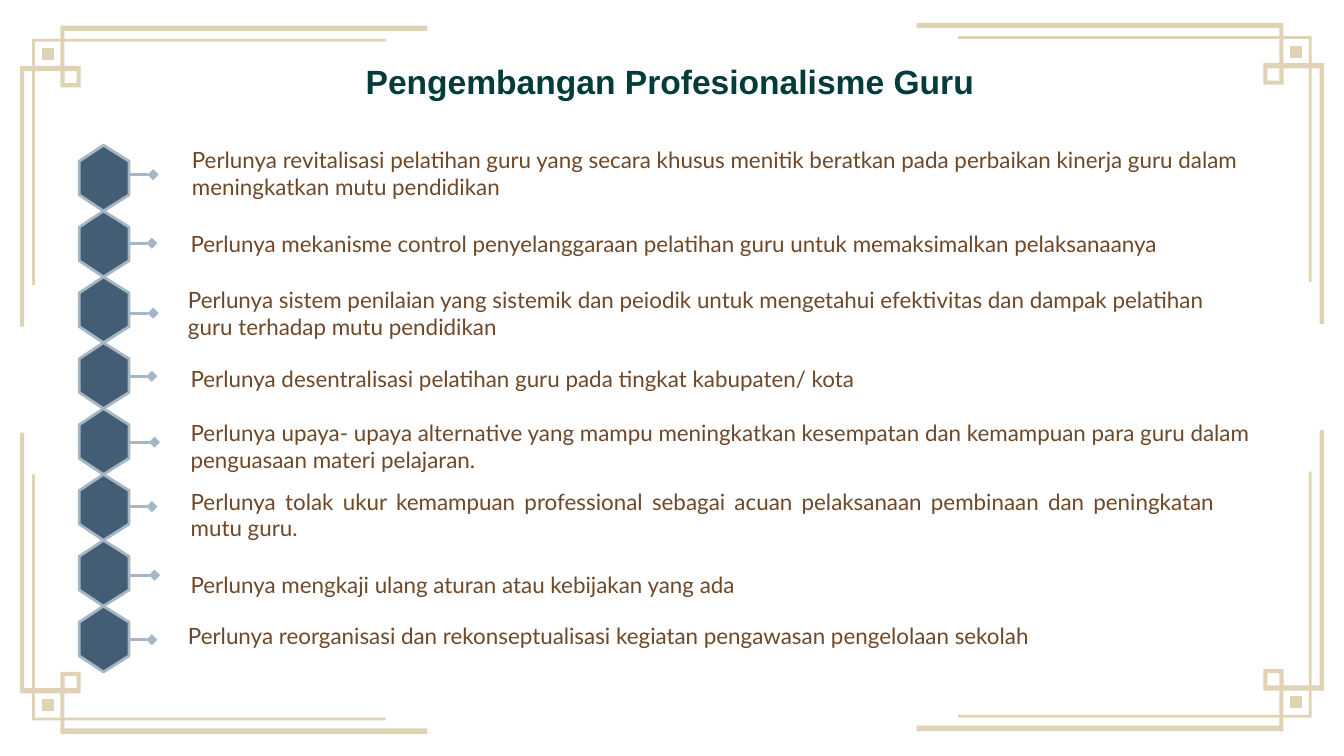
"""Build the slide on the professional growth of teachers."""
import lxml.etree
import pptx
import pptx.dml.color
import pptx.enum.shapes
import pptx.enum.text
import pptx.oxml.ns
import pptx.util

PX = 9144
WIDE = 1000
FLIP = 565
DROP = 2
HEX_TOP, HEX_STEP = 108, 49
COLORS = {
    "gold": "E0D2B4",
    "green": "043B3B",
    "brown": "6E4829",
    "navy": "435D74",
    "edge": "A5B7C5",
    "link": "A5B7C6",
}
CORNER = [
    [[(24, 29), (24, 212), (26, 212), (26, 31), (287, 31), (287, 29)]],
    [[(45, 19), (45, 49), (15, 49), (15, 243), (18, 243), (18, 53),
      (48, 53), (48, 23), (318, 23), (318, 19)]],
    [[(57, 53), (57, 62), (48, 62), (48, 53)],
     [(45, 49), (45, 65), (60, 65), (60, 49)]],
    [[(31, 36), (31, 45), (40, 45), (40, 36)]],
]
HEXAGON = [(59, 12), (77, 0), (96, 12), (96, 37), (77, 49), (59, 37)]
ROWS = [
    ((96, 130), (133, 104, 867, 50), {},
     "Perlunya revitalisasi pelatihan guru yang secara khusus menitik beratkan "
     "pada perbaikan kinerja guru dalam meningkatkan mutu pendidikan"),
    ((95, 181), (132, 166, 826, 30), {},
     "Perlunya mekanisme control penyelanggaraan pelatihan guru untuk "
     "memaksimalkan pelaksanaanya"),
    ((96, 233), (130, 208, 809, 50), {},
     "Perlunya sistem penilaian yang sistemik dan peiodik untuk mengetahui "
     "efektivitas dan dampak pelatihan guru terhadap mutu pendidikan"),
    ((95, 280), (132, 267, 657, 30), {},
     "Perlunya desentralisasi pelatihan guru pada tingkat kabupaten/ kota"),
    ((97, 329), (132, 307, 809, 50), {},
     "Perlunya upaya- upaya alternative yang mampu meningkatkan kesempatan "
     "dan kemampuan para guru dalam penguasaan materi pelajaran."),
    ((95, 377), (132, 358, 782, 50), {"align": "JUSTIFY"},
     "Perlunya tolak ukur kemampuan professional sebagai acuan pelaksanaan "
     "pembinaan dan peningkatan mutu guru."),
    ((97, 428), (132, 410, 500, 37), {"align": "JUSTIFY", "space": 1.5},
     "Perlunya mengkaji ulang aturan atau kebijakan yang ada"),
    ((95, 476), (130, 458, 755, 30), {},
     "Perlunya reorganisasi dan rekonseptualisasi kegiatan pengawasan "
     "pengelolaan sekolah"),
]


def tint(name):
    """Return the named color."""
    return pptx.dml.color.RGBColor.from_string(COLORS[name])


def write(frame, text, size=12, font="Lato", color="brown", bold=False,
          align="LEFT", space=1.0):
    """Put formatted text in a frame."""
    frame.word_wrap = True
    frame.auto_size = pptx.enum.text.MSO_AUTO_SIZE.NONE
    frame.vertical_anchor = pptx.enum.text.MSO_ANCHOR.TOP
    frame.margin_left = frame.margin_right = 10 * PX
    part = frame.paragraphs[0]
    part.alignment = getattr(pptx.enum.text.PP_ALIGN, align)
    part.line_spacing = space
    run = part.add_run()
    run.text = text
    run.font.size = pptx.util.Pt(size)
    run.font.name = font
    run.font.bold = bold
    run.font.color.rgb = tint(color)


class Deck:
    """Hold the style and the current slide."""

    def __init__(self):
        """Open a deck with one titled slide."""
        self.file = pptx.Presentation()
        self.file.slide_width = WIDE * PX
        self.file.slide_height = WIDE * PX * 9 // 16
        self.slide = self.file.slides.add_slide(self.file.slide_layouts[5])
        self.shapes = self.slide.shapes

    def title(self, text, box):
        """Fill the title."""
        shape = self.shapes.title
        shape.left, shape.top, shape.width, shape.height = (n * PX for n in box)
        shape.text_frame.margin_top = shape.text_frame.margin_bottom = 10 * PX
        write(shape.text_frame, text, size=18, font="Arial", color="green",
              bold=True, align="CENTER")

    def text(self, text, box, **style):
        """Add a text box."""
        shape = self.shapes.add_textbox(*(n * PX for n in box))
        write(shape.text_frame, text, **style)

    def outline(self, loops, fill, edge=None):
        """Add a closed outline of one or more loops."""
        pen = self.shapes.build_freeform(*loops[0][0], scale=PX)
        pen.add_line_segments(loops[0][1:], close=True)
        for loop in loops[1:]:
            pen.move_to(*loop[0])
            pen.add_line_segments(loop[1:], close=True)
        shape = pen.convert_to_shape()
        shape.shadow.inherit = False
        shape.fill.solid()
        shape.fill.fore_color.rgb = tint(fill)
        if edge:
            shape.line.color.rgb = tint(edge)
            shape.line.width = pptx.util.Pt(1.5)
        else:
            shape.line.fill.background()

    def corner(self, right, low):
        """Draw the frame of one corner."""
        for loops in CORNER:
            self.outline([[(WIDE - x if right else x,
                            (FLIP - y if low else y) - DROP * right)
                           for x, y in loop] for loop in loops], "gold")

    def link(self, x, y):
        """Draw a short line with a diamond end."""
        kind = pptx.enum.shapes.MSO_CONNECTOR.STRAIGHT
        line = self.shapes.add_connector(
            kind, x * PX, y * PX, (x + 18) * PX, y * PX)
        line.line.color.rgb = tint("link")
        line.line.width = pptx.util.Pt(1.5)
        qn = pptx.oxml.ns.qn
        props = line.element.spPr
        lxml.etree.SubElement(props.find(qn("a:ln")), qn("a:tailEnd"),
                              type="diamond")
        lxml.etree.SubElement(props, qn("a:effectLst"))

    def hexagon(self, top):
        """Draw one hexagon of the chain."""
        self.outline([[(x, y + top) for x, y in HEXAGON]], "navy", "edge")


def main():
    """Draw the slide and save it."""
    deck = Deck()
    for right in (True, False):
        for low in (False, True):
            deck.corner(right, low)
    deck.title("Pengembangan Profesionalisme Guru", (77, 35, 843, 39))
    for place, (start, box, style, text) in enumerate(ROWS):
        deck.link(*start)
        deck.hexagon(HEX_TOP + place * HEX_STEP)
        deck.text(text, box, **style)
    deck.file.save("out.pptx")


if __name__ == "__main__":
    main()
